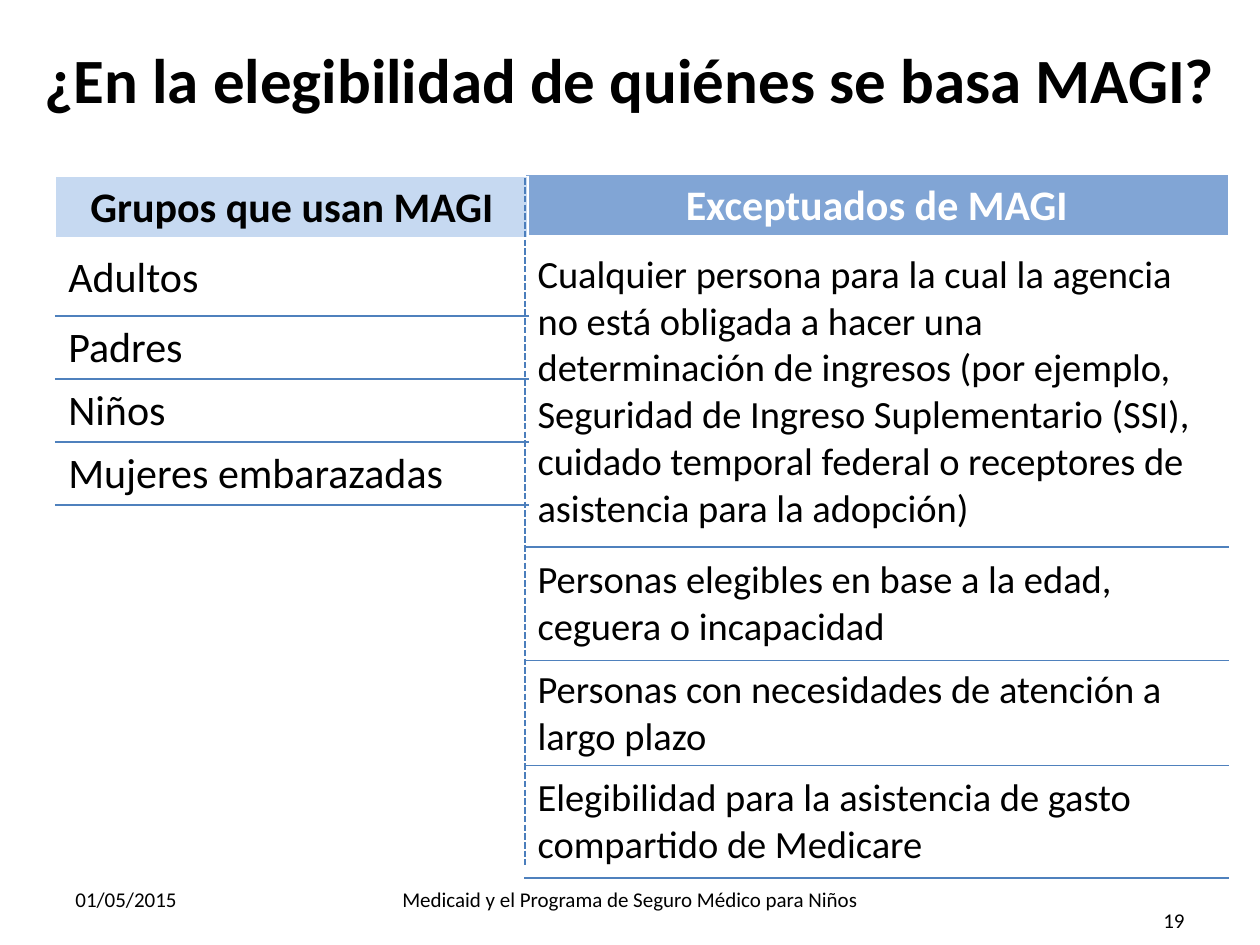
from lxml import etree
from pptx import Presentation
from pptx import util as u
from pptx.dml.color import RGBColor
from pptx.enum import dml, shapes, text
from pptx.oxml import ns

# The slide is a grid of 120 columns by 90 rows; boxes are (left, top, width, height).
COLS, ROWS = 120, 90
CELL = u.Inches(10) // COLS
FONT = "Calibri"
COLORS = {"text": "000000", "white": "FFFFFF", "light": "C6D9F1",
          "medium": "81A5D5", "rule": "4F81BD", "divider": "4B7EBC"}
LEFT, CENTER, RIGHT = text.PP_ALIGN.LEFT, text.PP_ALIGN.CENTER, text.PP_ALIGN.RIGHT

USERS = ["Grupos que usan MAGI", "Adultos", "Padres", "Niños", "Mujeres embarazadas"]
EXEMPT = [
    "Exceptuados de MAGI",
    "Cualquier persona para la cual la agencia no está obligada a hacer una "
    "determinación de ingresos (por ejemplo, Seguridad de Ingreso Suplementario "
    "(SSI), cuidado temporal federal o receptores de asistencia para la adopción)",
    "Personas elegibles en base a la edad, ceguera o incapacidad",
    "Personas con necesidades de atención a largo plazo",
    "Elegibilidad para la asistencia de gasto compartido de Medicare",
]


def grid(*units):
    return [u.Emu(round(n * CELL)) for n in units]


def rgb(name):
    return RGBColor.from_string(COLORS[name])


def write(tf, words, size, color="text", bold=False, align=LEFT):
    tf.word_wrap = True
    p = tf.paragraphs[0]
    p.alignment = align
    r = p.add_run()
    r.text = words
    r.font.name, r.font.size, r.font.bold = FONT, u.Pt(size), bold
    r.font.color.rgb = rgb(color)


def add_label(slide, box, words, size, **fmt):
    tf = slide.shapes.add_textbox(*grid(*box)).text_frame
    tf.vertical_anchor = text.MSO_ANCHOR.MIDDLE
    write(tf, words, size, **fmt)


def set_borders(cell, **sides):
    """Draw cell borders; each side (L, R, T, B) is a colour name and a width in points."""
    tc_pr = cell._tc.get_or_add_tcPr()
    for side in "LRTB":
        color, width = sides[side]
        ln = etree.SubElement(tc_pr, ns.qn(f"a:ln{side}"), w=str(u.Pt(width)))
        fill = etree.SubElement(ln, ns.qn("a:solidFill"))
        etree.SubElement(fill, ns.qn("a:srgbClr"), val=COLORS[color])


def add_group_table(slide, left, top, width, heights, entries, size, head_fill, head_color):
    """Place a one-column table whose first entry is the heading."""
    box = grid(left, top, width, sum(heights))
    table = slide.shapes.add_table(len(entries), 1, *box).table
    thin, thick, rule = ("white", 1), ("white", 3), ("rule", 1)
    for i, (words, height) in enumerate(zip(entries, heights)):
        table.rows[i].height = grid(height)[0]
        cell = table.cell(i, 0)
        head = i == 0
        set_borders(cell, L=thin, R=thin,
                    T=thin if head else thick if i == 1 else rule,
                    B=thick if head else rule)
        cell.fill.solid()
        cell.fill.fore_color.rgb = rgb(head_fill if head else "white")
        if head:
            write(cell.text_frame, words, 24, color=head_color, bold=True, align=CENTER)
        else:
            cell.vertical_anchor = text.MSO_ANCHOR.MIDDLE
            write(cell.text_frame, words, size)


def add_divider(slide, x, top, bottom):
    line = slide.shapes.add_connector(shapes.MSO_CONNECTOR.STRAIGHT, *grid(x, top, x, bottom))
    line.line.color.rgb = rgb("divider")
    line.line.width = u.Pt(1.25)
    line.line.dash_style = dml.MSO_LINE.SQUARE_DOT
    etree.SubElement(line._element.spPr, ns.qn("a:effectLst"))


def add_footer(slide, top, height):
    side, margin = 28, 6
    middle = margin + side
    add_label(slide, (margin, top, side, height), "01/05/2015", 12)
    add_label(slide, (middle, top, COLS - 2 * middle, height),
              "Medicaid y el Programa de Seguro Médico para Niños", 12, align=CENTER)
    add_label(slide, (COLS - middle, top + 2, side, height), "19", 12, align=RIGHT)


def main():
    prs = Presentation()
    prs.slide_width, prs.slide_height = grid(COLS, ROWS)
    slide = prs.slides.add_slide(prs.slide_layouts[6])
    split = 50
    add_label(slide, (0, 0, COLS, 15), "¿En la elegibilidad de quiénes se basa MAGI?",
              36, bold=True, align=CENTER)
    add_group_table(slide, split, 16.6, 67, [5.9, 29.5, 10.8, 8.6, 10.7],
                    EXEMPT, 22, "medium", "white")
    add_footer(slide, 83.2, 4.8)
    add_group_table(slide, 5.3, 16.8, 45, [6, 7.3, 6, 6, 6], USERS, 24, "light", "text")
    add_divider(slide, split, 17, 82.4)
    prs.save("out.pptx")


if __name__ == "__main__":
    main()
